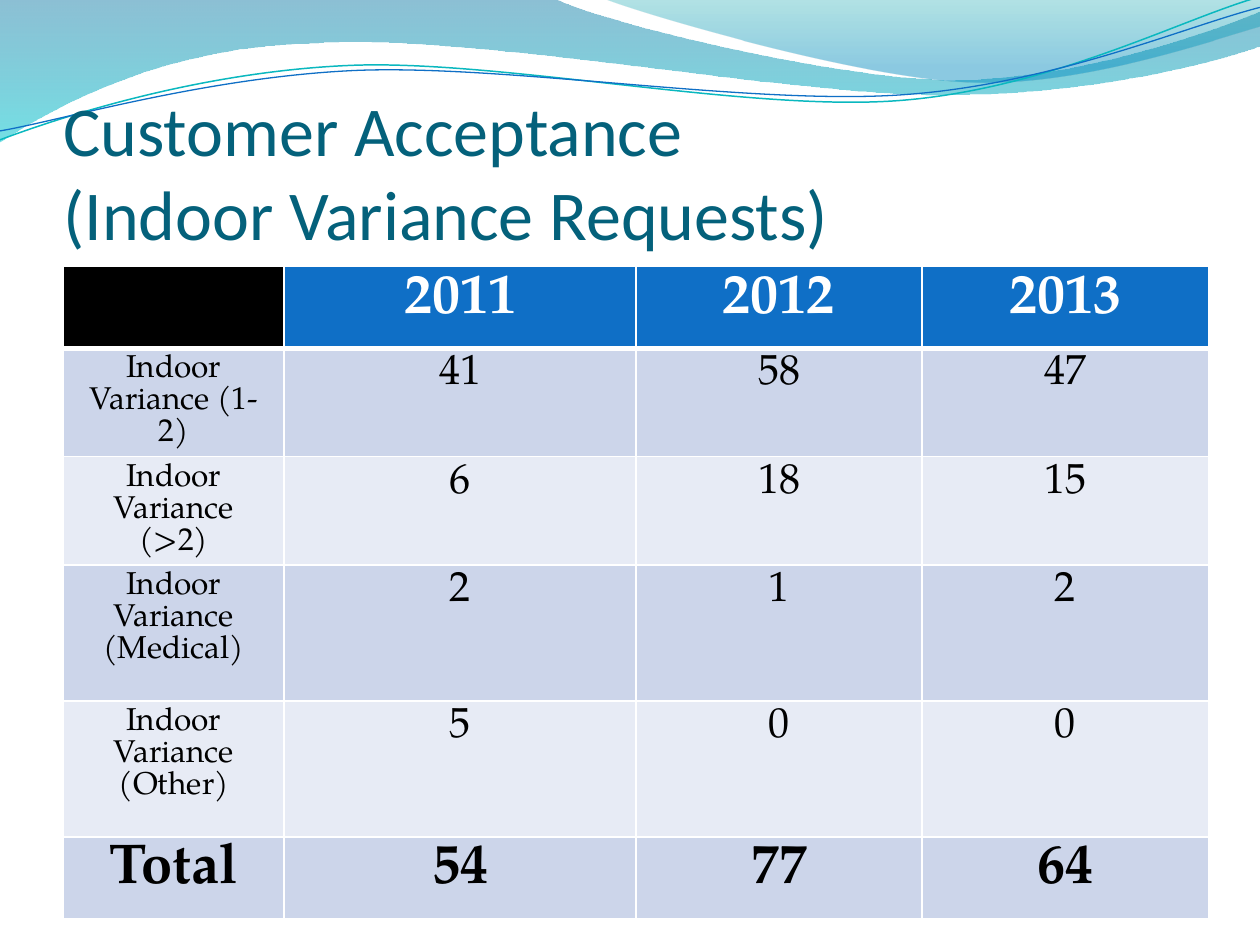
from lxml import etree
from pptx import Presentation
from pptx.dml.color import RGBColor
from pptx.enum.text import MSO_ANCHOR, PP_ALIGN
from pptx.oxml.ns import qn
from pptx.util import Cm, Pt

BOTTOM = MSO_ANCHOR.BOTTOM
CENTER = PP_ALIGN.CENTER


def color(value):
    return RGBColor.from_string(value)


def draw_outline(shapes, start, segments, close):
    builder = shapes.build_freeform(Cm(start[0]), Cm(start[1]), scale=1.0)
    builder.add_line_segments([(Cm(s[-2]), Cm(s[-1])) for s in segments], close=close)
    shape = builder.convert_to_shape()
    shape.shadow.inherit = False
    for line, segment in zip(list(shape.element.iter(qn("a:lnTo"))), segments):
        if len(segment) == 6:
            curve = etree.Element(qn("a:cubicBezTo"))
            for x, y in zip(segment[::2], segment[1::2]):
                etree.SubElement(curve, qn("a:pt"), x=str(Cm(x) - shape.left), y=str(Cm(y) - shape.top))
            line.getparent().replace(line, curve)
    return shape


deck = Presentation()
deck.slide_width = Cm(25.4)
deck.slide_height = Cm(19.05)
page = deck.slides.add_slide(deck.slide_layouts[6])

waves = [
    ((0, 0),
     [(11.18, -0.03),
      (12.09, 0.43, 16.87, 1.6, 19.25, 1.6),
      (21.67, 1.6, 24.33, 0.66, 25.4, 0.23),
      (25.43, 0.91),
      (24.97, 1.12, 22.1, 1.93, 18.95, 1.91),
      (15.8, 1.91, 9.7, 0.71, 6.53, 0.86),
      (3.28, 0.91, 1.17, 2.11, -0.03, 2.87)],
     [(0, "0074A1", 45), (1, "00C6CF", 55)]),
    ((12.17, -0.03),
     [(12.93, 0.28, 17.32, 1.57, 19.53, 1.65),
      (21.74, 1.75, 24.41, 0.81, 25.4, 0.53),
      (25.4, 0)],
     [(0, "00A1A9", 30), (0.8, "008BBF", 45)]),
]
for start, segments, stops in waves:
    wave = draw_outline(page.shapes, start, segments, True)
    wave.line.fill.background()
    wave.fill.gradient()
    wave.fill.gradient_angle = 270
    for stop, (position, value, opacity) in zip(wave.fill.gradient_stops, stops):
        stop.position = position
        stop.color.rgb = color(value)
    for element, (position, value, opacity) in zip(wave.element.iter(qn("a:srgbClr")), stops):
        etree.SubElement(element, qn("a:alpha"), val=str(opacity * 1000))

ripples = [
    ((0, 2.82),
     [(1.22, 2.36, 4.01, 1.45, 7.04, 1.32),
      (10.03, 1.19, 15.06, 2.26, 18.11, 2.03),
      (21.16, 1.8, 23.83, 0.38, 25.35, -0.05)],
     "0AB8BF", 0.85),
    ((0, 2.64),
     [(1.19, 2.44, 4.17, 1.55, 7.19, 1.42),
      (10.24, 1.3, 15.16, 2.13, 18.21, 1.91),
      (21.23, 1.7, 23.9, 0.53, 25.4, 0.15)],
     "0F6FC6", 0.75),
]
for start, segments, value, width in ripples:
    ripple = draw_outline(page.shapes, start, segments, False)
    ripple.fill.background()
    ripple.line.color.rgb = color(value)
    ripple.line.width = Pt(width)

title = page.shapes.add_textbox(Cm(1.28), Cm(1.96), Cm(22.86), Cm(3.18))
frame = title.text_frame
frame.word_wrap = True
frame.vertical_anchor = BOTTOM
frame.margin_left = frame.margin_right = frame.margin_bottom = 0
frame.margin_top = Cm(0.13)
frame.text = "Customer Acceptance \v(Indoor Variance Requests)"
for span in frame.paragraphs[0].runs:
    span.font.size = Pt(40)
    span.font.name = "Calibri"
    span.font.color.rgb = color("04617B")

rows = [
    ["", "2011", "2012", "2013"],
    ["Indoor Variance (1-2)", "41", "58", "47"],
    ["Indoor Variance (>2)", "6", "18", "15"],
    ["Indoor Variance (Medical)", "2", "1", "2"],
    ["Indoor Variance (Other)", "5", "0", "0"],
    ["Total", "54", "77", "64"],
]
column_widths = [4.45, 7.09, 5.77, 5.77]
row_heights = [1.65, 2.17, 2.17, 2.74, 2.74, 1.65]
last = len(rows) - 1

table = page.shapes.add_table(len(rows), len(column_widths), Cm(1.28), Cm(5.37),
                              Cm(sum(column_widths)), Cm(sum(row_heights))).table
for column, width in zip(table.columns, column_widths):
    column.width = Cm(width)
for row, height in zip(table.rows, row_heights):
    row.height = Cm(height)

for i, texts in enumerate(rows):
    for j, text in enumerate(texts):
        cell = table.cell(i, j)
        borders = {"a:lnL": 1, "a:lnR": 1, "a:lnT": 3 if i == 1 else 1, "a:lnB": 3 if i == 0 else 1}
        for tag, width in borders.items():
            border = etree.SubElement(cell._tc.get_or_add_tcPr(), qn(tag), w=str(Pt(width)))
            border_fill = etree.SubElement(border, qn("a:solidFill"))
            etree.SubElement(border_fill, qn("a:srgbClr"), val="FFFFFF")
        cell.fill.solid()
        if i == 0:
            fill = "0F6FC6" if j else "000000"
        else:
            fill = "CCD5EA" if i % 2 else "E7EBF5"
        cell.fill.fore_color.rgb = color(fill)
        cell.text_frame.text = text
        para = cell.text_frame.paragraphs[0]
        para.alignment = CENTER
        emphasis = i in (0, last)
        if j == 0 and not emphasis:
            para.line_spacing = Pt(18.25)
        for span in para.runs:
            span.font.name = "TeX Gyre Pagella"
            span.font.size = Pt(32 if emphasis else 24 if j else 18)
            span.font.bold = emphasis
            span.font.color.rgb = color("000000" if i else "FFFFFF")

deck.save("out.pptx")
